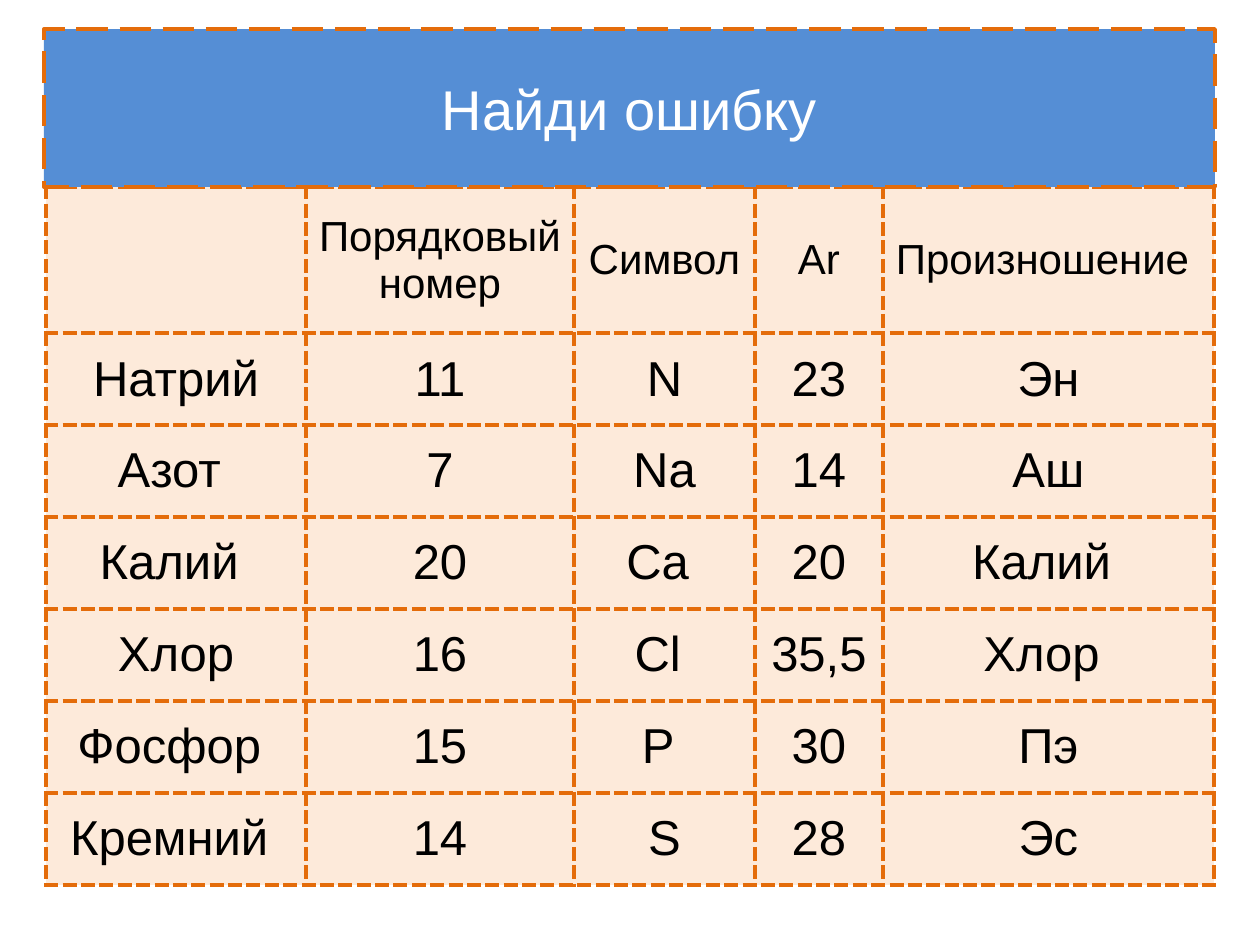
"""Build a slide with a chemistry table in which pupils look for mistakes."""
from dataclasses import dataclass

from lxml import etree
from pptx import Presentation
from pptx import util as u
from pptx.dml.color import RGBColor
from pptx.enum import dml, shapes, text
from pptx.oxml.ns import qn

SCALE = 914400 / 126
FONT = "Arial"
ORANGE, CREAM, BLUE = "E46C0A", "FDEADA", "558ED5"
BLACK, WHITE = "000000", "FFFFFF"
LINE_WIDTH = u.Pt(2.25)
LEFT, TOP = 46, 187
COL_WIDTHS = [260, 268, 181, 128, 331]
HEADER_HEIGHT, ROW_HEIGHT = 146, 92


@dataclass
class Row:
    cells: list[str]
    height: int = ROW_HEIGHT
    size: int = 28


ROWS = [
    Row(["", "Порядковый номер", "Символ ", "Ar", "Произношение "], HEADER_HEIGHT, 24),
    Row(["Натрий", "11", "N", "23", "Эн"]),
    Row(["Азот ", "7", "Na", "14", "Аш"]),
    Row(["Калий ", "20", "Ca ", "20", "Калий "]),
    Row(["Хлор", "16", "Cl ", "35,5", "Хлор "]),
    Row(["Фосфор ", "15", "P ", "30", "Пэ"]),
    Row(["Кремний ", "14", "S", "28", "Эс"]),
]


def px(n: int) -> u.Emu:
    return u.Emu(round(n * SCALE))


def rgb(value: str) -> RGBColor:
    return RGBColor.from_string(value)


def fill(target, color: str) -> None:
    target.fill.solid()
    target.fill.fore_color.rgb = rgb(color)


def write(tf, content: str, size: int, color: str) -> None:
    p = tf.paragraphs[0]
    p.alignment = text.PP_ALIGN.CENTER
    if not content:
        return
    r = p.add_run()
    r.text = content
    r.font.name = FONT
    r.font.size = u.Pt(size)
    r.font.color.rgb = rgb(color)


def add_borders(cell) -> None:
    tc_pr = cell._tc.get_or_add_tcPr()
    for side in ("lnL", "lnR", "lnT", "lnB"):
        ln = etree.SubElement(tc_pr, qn(f"a:{side}"), w=str(LINE_WIDTH))
        solid = etree.SubElement(ln, qn("a:solidFill"))
        etree.SubElement(solid, qn("a:srgbClr"), val=ORANGE)
        etree.SubElement(ln, qn("a:prstDash"), val="dash")


def add_elements_table(s, rows: list[Row]) -> None:
    height = sum(row.height for row in rows)
    frame = s.shapes.add_table(len(rows), len(COL_WIDTHS), px(LEFT), px(TOP),
                               px(sum(COL_WIDTHS)), px(height))
    table = frame.table
    table.first_row = table.horz_banding = False
    for col, width in zip(table.columns, COL_WIDTHS):
        col.width = px(width)
    for table_row, row in zip(table.rows, rows):
        table_row.height = px(row.height)
        for cell, content in zip(table_row.cells, row.cells):
            add_borders(cell)
            fill(cell, CREAM)
            cell.vertical_anchor = text.MSO_ANCHOR.MIDDLE
            write(cell.text_frame, content, row.size, BLACK)


def add_title(s, content: str) -> None:
    sp = s.shapes.add_shape(shapes.MSO_SHAPE.RECTANGLE, px(44), px(29), px(1171), px(158))
    sp.shadow.inherit = False
    fill(sp, BLUE)
    sp.line.color.rgb = rgb(ORANGE)
    sp.line.width = LINE_WIDTH
    sp.line.dash_style = dml.MSO_LINE.LONG_DASH
    tf = sp.text_frame
    tf.word_wrap = True
    tf.vertical_anchor = text.MSO_ANCHOR.MIDDLE
    write(tf, content, 32, WHITE)


def main() -> None:
    prs = Presentation()
    prs.slide_width, prs.slide_height = px(1260), px(945)
    s = prs.slides.add_slide(prs.slide_layouts[6])
    add_elements_table(s, ROWS)
    add_title(s, "Найди ошибку")
    prs.save("out.pptx")


if __name__ == "__main__":
    main()
